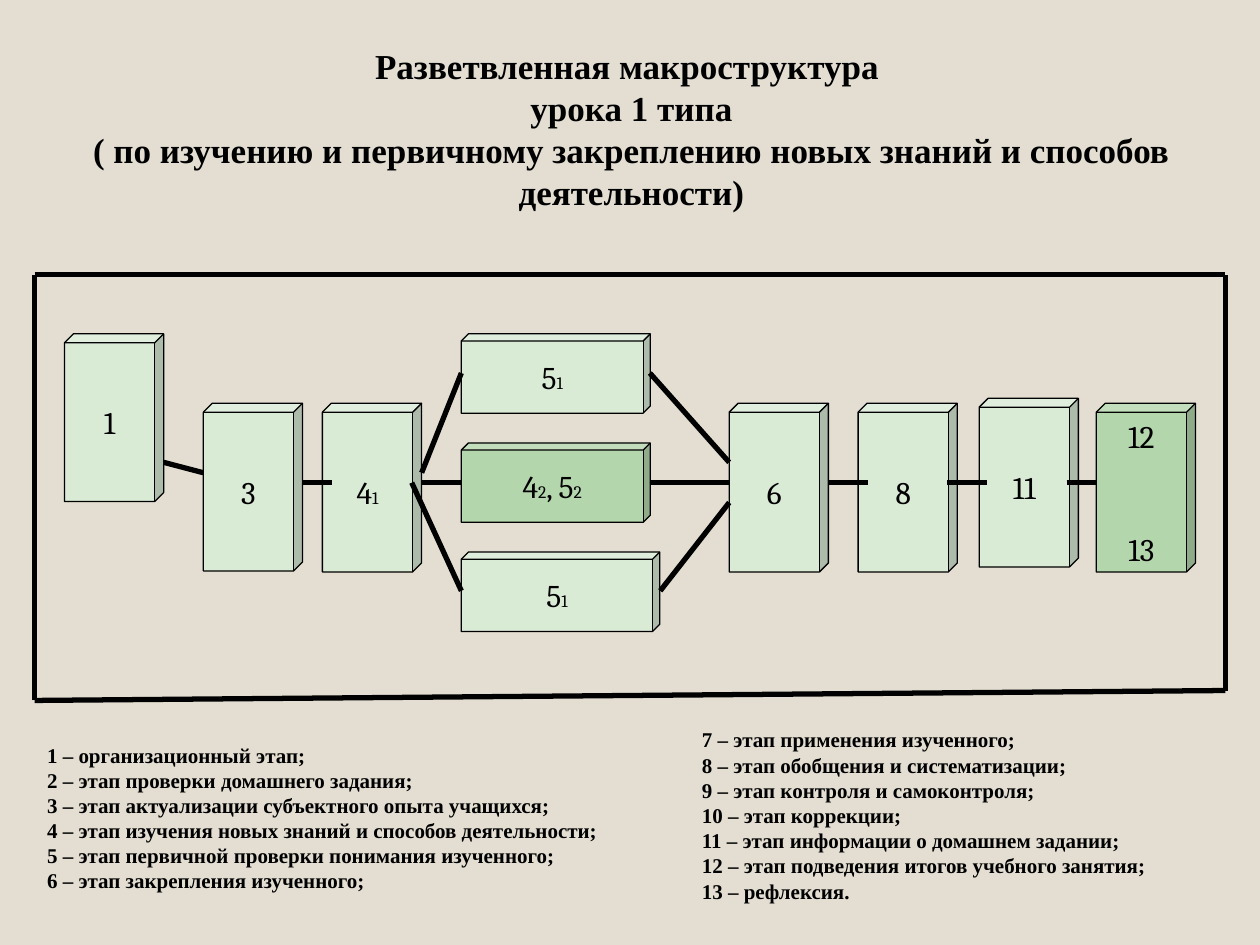
import pptx
import pptx.dml.color
import pptx.enum.shapes
import pptx.enum.text
import pptx.oxml.ns
import pptx.util
from lxml import etree
from pptx.util import Cm

LIGHT, GREEN, BLACK = "D9EAD5", "B3D6AC", "000000"
AXIS = 9.73
CENTER = pptx.enum.text.PP_ALIGN.CENTER
MIDDLE = pptx.enum.text.MSO_ANCHOR.MIDDLE

TITLE = ("Разветвленная макроструктура \vурока 1 типа\v"
         "( по изучению и первичному закреплению новых знаний и способов деятельности)")
FIRST_STAGES = [
    "1 – организационный этап;",
    "2 – этап проверки домашнего задания;",
    "3 – этап актуализации субъектного опыта учащихся;",
    "4 – этап изучения новых знаний и способов деятельности;",
    "5 – этап первичной проверки понимания изученного;",
    "6 – этап закрепления изученного;",
]
LAST_STAGES = [
    "7 – этап применения изученного;",
    "8 – этап обобщения и систематизации;",
    "9 – этап контроля и самоконтроля;",
    "10 – этап коррекции;",
    "11 – этап информации о домашнем задании;",
    "12 – этап подведения итогов учебного занятия;",
    "13 – рефлексия.",
]
STAGES = [
    (1.3, 6.73, 3.38, LIGHT, [["1"]]),
    (4.1, 8.13, 3.38, LIGHT, [["3"]]),
    (6.5, 8.13, 3.4, LIGHT, [["4", "1"]]),
    (14.7, 8.13, 3.4, LIGHT, [["6"]]),
    (17.3, 8.13, 3.4, LIGHT, [["8"]]),
    (19.74, 8.03, 3.4, LIGHT, [["11"]]),
    (22.1, 8.13, 3.4, GREEN, [["12"], ["13"]]),
]
BRANCHES = [
    (3.81, LIGHT, ["5", "1"]),
    (3.81, GREEN, ["4", "2", ", 5", "2"]),
    (4, LIGHT, ["5", "1"]),
]
FRAME = [
    (1.3, 5.54, 24.7, 5.54),
    (0.7, 14.12, 0.7, 5.54),
    (0.7, 5.54, 1.5, 5.54),
    (24.7, 5.54, 24.7, 13.92),
    (0.7, 14.12, 24.7, 13.92),
]
FORKS = [
    (3.3, 9.32, 4.1, 9.53),
    (8.5, 9.53, 9.3, 7.52),
    (8.3, AXIS, 9.3, 11.91),
    (13.1, 7.52, 14.7, 9.32),
    (13.31, 11.91, 14.7, 10.13),
]
AXIS_LINKS = [(6.1, 6.7), (8.5, 9.3), (13.1, 14.7), (16.7, 17.5), (19.1, 19.9), (21.5, 22.1)]


def color(value):
    """Return the colour for a hex string."""
    return pptx.dml.color.RGBColor.from_string(value)


def format_run(run, size, name, bold=False):
    """Set the font of a run."""
    run.font.size = pptx.util.Pt(size)
    run.font.name = name
    run.font.bold = bold
    run.font.color.rgb = color(BLACK)


def add_text(slide, box, text, size):
    """Add a wrapped box of bold text and return its frame."""
    frame = slide.shapes.add_textbox(*map(Cm, box)).text_frame
    frame.word_wrap = True
    frame.text = text
    for paragraph in frame.paragraphs:
        for run in paragraph.runs:
            format_run(run, size, "Times New Roman", True)
    return frame


def add_title(slide):
    """Add the centred heading."""
    frame = add_text(slide, (1.3, 1.73, 22.86, 2.57), TITLE, 20)
    frame.vertical_anchor = MIDDLE
    frame.margin_bottom = Cm(0.97)
    frame.paragraphs[0].alignment = CENTER


def add_legends(slide):
    """Add the two lists of lesson stages."""
    frame = add_text(slide, (0.7, 14.94, 12, 3.4), "\n".join(FIRST_STAGES), 12)
    for paragraph in frame.paragraphs:
        paragraph.line_spacing = 0.8
        paragraph.space_before = pptx.util.Pt(2.8)
        properties = paragraph._p.get_or_add_pPr()
        properties.set("marL", str(Cm(0.97)))
        properties.set("indent", str(-Cm(0.97)))
    add_text(slide, (13.9, 14.53, 9.86, 3.84), "\n".join(LAST_STAGES), 12)


def add_cube(slide, box, fill, labels):
    """Add a cube whose labels alternate full-size and index parts."""
    shape = slide.shapes.add_shape(pptx.enum.shapes.MSO_SHAPE.CUBE, *map(Cm, box))
    shape.adjustments[0] = 0.09
    shape.shadow.inherit = False
    shape.fill.solid()
    shape.fill.fore_color.rgb = color(fill)
    shape.line.color.rgb = color(BLACK)
    shape.line.width = pptx.util.Pt(0.75)
    frame = shape.text_frame
    frame.word_wrap = False
    frame.vertical_anchor = MIDDLE
    for number, parts in enumerate(labels):
        paragraph = frame.add_paragraph() if number else frame.paragraphs[0]
        paragraph.alignment = CENTER
        if number:
            paragraph.space_before = pptx.util.Pt(43)
        for index, part in enumerate(parts):
            run = paragraph.add_run()
            run.text = part
            format_run(run, 10 if index % 2 else 18, "Cambria")


def add_line(slide, ends):
    """Add a thick black line between two points."""
    line = slide.shapes.add_connector(pptx.enum.shapes.MSO_CONNECTOR.STRAIGHT, *map(Cm, ends))
    line.line.color.rgb = color(BLACK)
    line.line.width = pptx.util.Pt(3)
    etree.SubElement(line._element.spPr, pptx.oxml.ns.qn("a:effectLst"))


def main():
    """Build and save the slide."""
    presentation = pptx.Presentation()
    presentation.slide_width, presentation.slide_height = Cm(25.4), Cm(19.05)
    slide = presentation.slides.add_slide(presentation.slide_layouts[6])
    slide.background.fill.solid()
    slide.background.fill.fore_color.rgb = color("E3DED1")
    add_title(slide)
    for left, top, height, fill, labels in STAGES:
        add_cube(slide, (left, top, 2, height), fill, labels)
    for row, (width, fill, parts) in enumerate(BRANCHES):
        add_cube(slide, (9.3, 6.73 + 2.2 * row, width, 1.6), fill, [parts])
    for ends in FRAME + FORKS + [(start, AXIS, end, AXIS) for start, end in AXIS_LINKS]:
        add_line(slide, ends)
    add_legends(slide)
    presentation.save("out.pptx")


if __name__ == "__main__":
    main()
